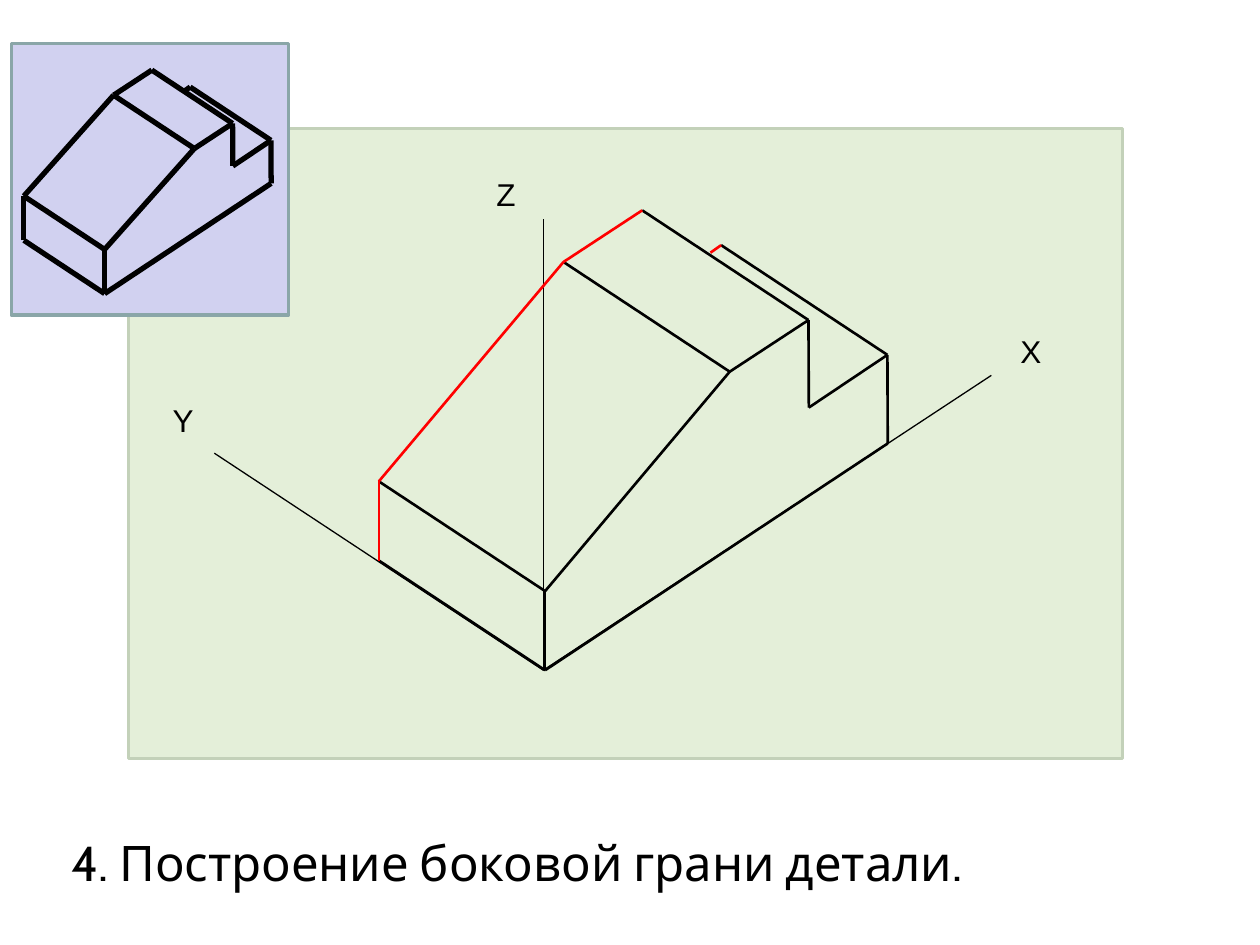
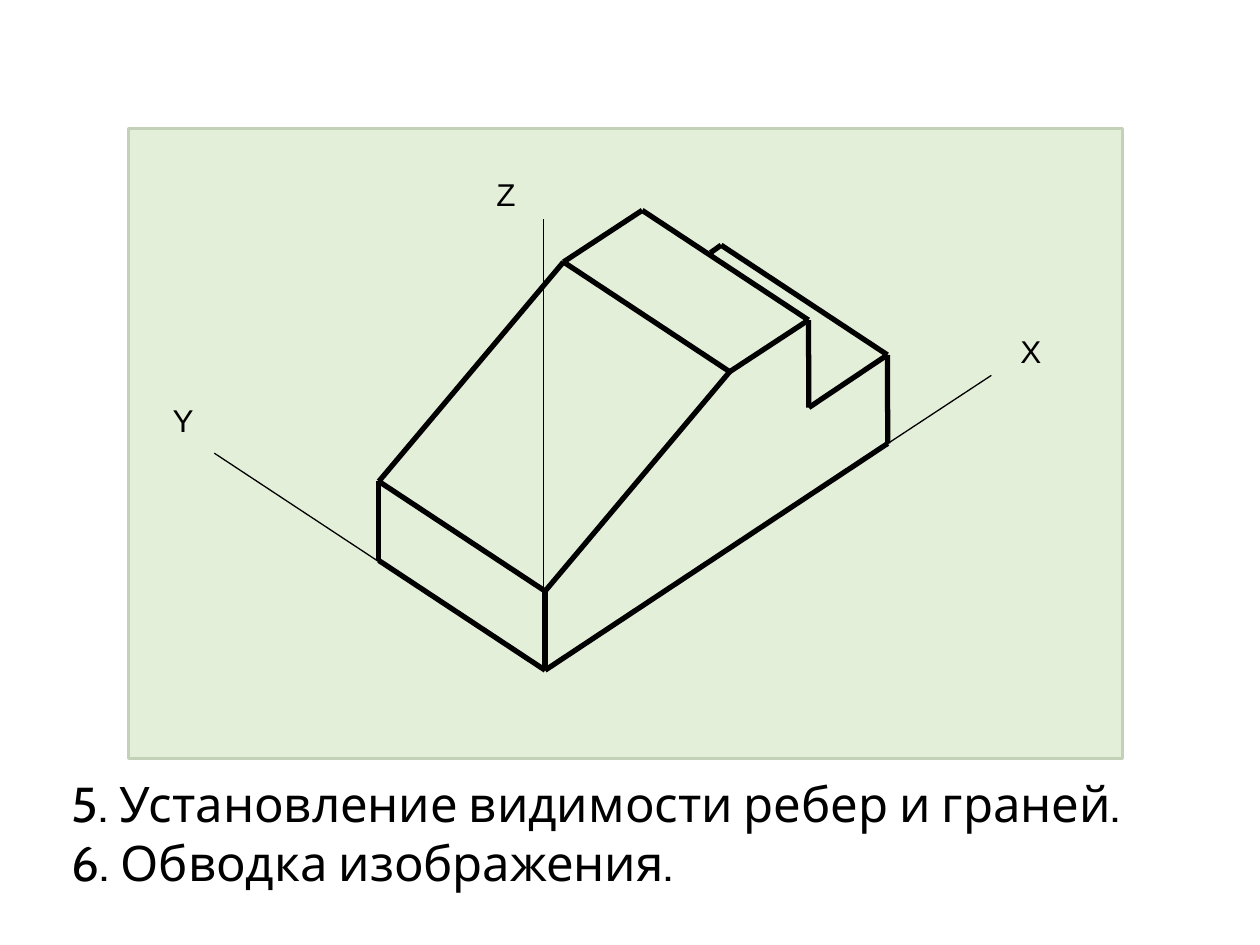
"""Build two slides on constructing an axonometric view of a stepped part."""
from dataclasses import dataclass

from lxml.etree import SubElement
from pptx import Presentation
from pptx.dml.color import RGBColor
from pptx.enum.shapes import MSO_CONNECTOR, MSO_SHAPE
from pptx.enum.text import MSO_ANCHOR, MSO_AUTO_SIZE
from pptx.oxml.ns import qn
from pptx.util import Pt


@dataclass(frozen=True)
class Theme:
    ink: str = "000000"
    accent: str = "FF0000"
    field_fill: str = "E4EFD9"
    field_border: str = "C3D1B9"
    sample_fill: str = "D1D1F0"
    sample_border: str = "8AA6A8"
    step_font: str = "Cabin"
    axis_font: str = "Arial"
    step_size: int = 28
    axis_size: int = 18
    axis_weight: float = 0.75
    thin: float = 1.5
    bold: float = 3
    border_weight: float = 2


@dataclass(frozen=True)
class Drawing:
    box: tuple
    fill: str
    border: str
    weight: float
    origin: tuple = (311.5, 383)
    scale: float = 1
    nose_height: float = 45.2
    back_color: str = "000000"
    has_axes: bool = True


theme = Theme()


def add_text(slide, text, *, box, font, size, wrap=False, anchor=MSO_ANCHOR.TOP):
    frame = slide.shapes.add_textbox(*map(Pt, box)).text_frame
    frame.word_wrap = wrap
    frame.auto_size = MSO_AUTO_SIZE.NONE if wrap else MSO_AUTO_SIZE.SHAPE_TO_FIT_TEXT
    frame.vertical_anchor = anchor
    frame.text = text
    for paragraph in frame.paragraphs:
        paragraph.font.name = font
        paragraph.font.size = Pt(size)
        paragraph.font.color.rgb = RGBColor.from_string(theme.ink)


def add_edge(slide, start, end, color, weight):
    edge = slide.shapes.add_connector(
        MSO_CONNECTOR.STRAIGHT, *(Pt(round(value, 2)) for value in (*start, *end))
    )
    edge.line.color.rgb = RGBColor.from_string(color)
    edge.line.width = Pt(weight)
    SubElement(edge._element.spPr, qn("a:effectLst"))


axis_origin = (310.5, 383)
axes = [
    ("Z", (310.5, 125), (276.5, 96.5, 26, 29)),
    ("Х", (566.5, 214.5), (576, 186, 26.5, 29)),
    ("Y", (122.5, 259), (91.5, 225.5, 26.5, 29)),
]

# Corner offsets from the front lower corner of the part
ridge, crest, step_foot = (105.5, -170.6), (150.5, -200.1), (150.7, -150.1)
shelf, right_base = (195.6, -180.2), (195.8, -129.6)
depth = (-95, -62.7)
shelf_visible = (-6.1, 4.3)

field = dict(box=(73.5, 73.5, 568, 360), fill=theme.field_fill, border=theme.field_border)
sample = Drawing(
    box=(6.5, 25, 158.5, 155), fill=theme.sample_fill, border=theme.sample_border,
    weight=theme.bold, origin=(59.8, 167.8), scale=0.486, nose_height=52, has_axes=False,
)
steps = [
    ("4. Построение боковой грани детали.", 461.5,
     [Drawing(**field, weight=theme.thin, back_color=theme.accent), sample]),
    ("5. Установление видимости ребер и граней.\n6. Обводка изображения.", 444.5,
     [Drawing(**field, weight=theme.bold)]),
]

deck = Presentation()
deck.slide_width, deck.slide_height = Pt(720), Pt(540)

for step_text, step_top, drawings in steps:
    slide = deck.slides.add_slide(deck.slide_layouts[6])
    for drawing in drawings:
        panel = slide.shapes.add_shape(MSO_SHAPE.RECTANGLE, *map(Pt, drawing.box))
        panel.shadow.inherit = False
        panel.fill.solid()
        panel.fill.fore_color.rgb = RGBColor.from_string(drawing.fill)
        panel.line.color.rgb = RGBColor.from_string(drawing.border)
        panel.line.width = Pt(theme.border_weight)

        if drawing.has_axes:
            for axis_name, axis_end, label_box in axes:
                add_edge(slide, axis_origin, axis_end, theme.ink, theme.axis_weight)
                add_text(slide, axis_name, box=label_box,
                         font=theme.axis_font, size=theme.axis_size)

        base, nose = (0, 0), (0, -drawing.nose_height)
        front = [base, nose, ridge, crest, step_foot, shelf, right_base]
        receding = [base, nose, ridge, crest, shelf]
        back = [(x + depth[0], y + depth[1]) for x, y in receding]
        shelf_end = (back[-1][0] + shelf_visible[0], back[-1][1] + shelf_visible[1])

        front_edges = list(zip(front, front[1:] + front[:1]))
        depth_edges = list(zip(receding, back))
        back_edges = [*zip(back[:3], back[1:4]), (shelf_end, back[-1])]
        for edges, color in (
            (front_edges + depth_edges, theme.ink),
            (back_edges, drawing.back_color),
        ):
            for corners in edges:
                start, end = (
                    (drawing.origin[0] + drawing.scale * x,
                     drawing.origin[1] + drawing.scale * y)
                    for x, y in corners
                )
                add_edge(slide, start, end, color, drawing.weight)

    add_text(slide, step_text, box=(34, step_top, 648, 62), font=theme.step_font,
             size=theme.step_size, wrap=True, anchor=MSO_ANCHOR.MIDDLE)

deck.save("out.pptx")
